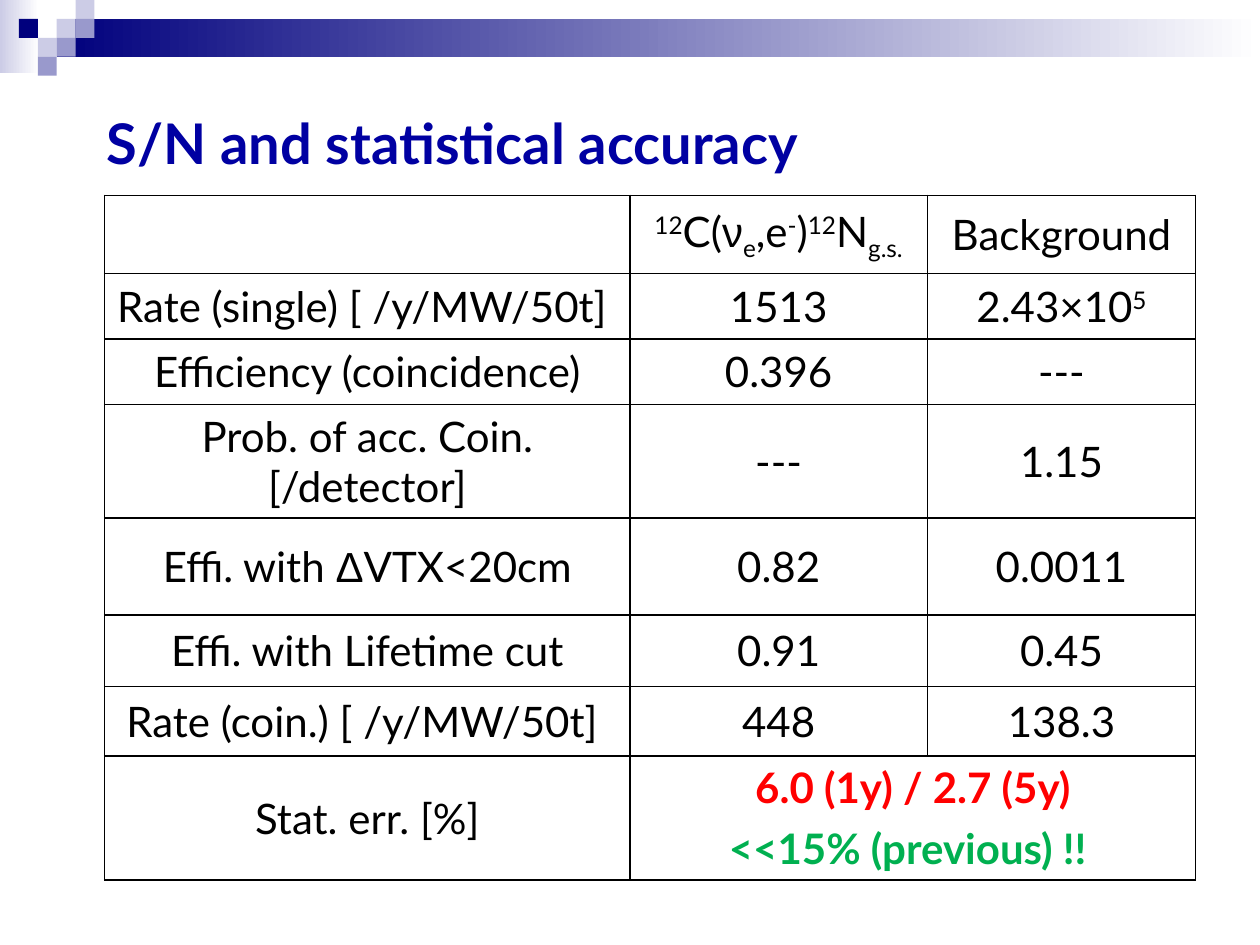
"""Build the slide on signal-to-noise and statistical accuracy."""
from pptx import Presentation, util as u
from pptx.dml.color import RGBColor
from pptx.enum import shapes, text
from pptx.oxml import parse_xml
from pptx.oxml.ns import nsdecls

TITLE = "S/N and statistical accuracy"
NAVY, LILAC, VIOLET, WHITE = "00007D", "CCCCE6", "9999CC", "FFFFFF"
BLACK, RED, GREEN = "000000", "FF0000", "00B050"

STEP = 0.15
BANDS = [(0, 0, 0.31, 0.58, LILAC), (3 * STEP, STEP, 9.55, 2 * STEP, NAVY)]
SQUARES = [(3, 1, LILAC), (4, 0, LILAC), (4, 1, VIOLET), (2, 2, LILAC),
           (1, 1, NAVY), (3, 2, VIOLET), (2, 3, VIOLET)]

REACTION = [("12", 30), ("C(", 0), ("ν", 0), ("e", -25), (",e", 0), ("-", 30),
            (")", 0), ("12", 30), ("N", 0), ("g.s.", -25)]
ROWS = [
    ("", REACTION, "Background"),
    ("Rate (single) [ /y/MW/50t] ", "1513", [("2.43×10", 0), ("5", 30)]),
    ("Efficiency (coincidence)", "0.396", "---"),
    ("Prob. of acc. Coin. [/detector]", "---", "1.15"),
    ([("Effi. with ", 0), ("Δ", 0), ("VTX<20cm", 0)], "0.82", "0.0011"),
    ("Effi. with Lifetime cut", "0.91", "0.45"),
    ("Rate (coin.) [ /y/MW/50t] ", "448", "138.3"),
    ("Stat. err. [%]",),
]
RESULTS = [("6.0 (1y) / 2.7 (5y)", RED, 0), ("<<15% (previous) !! ", GREEN, 6)]
COLUMN_WIDTHS = [4.17, 2.36, 2.13]
ROW_HEIGHTS = [0.62, 0.52, 0.52, 0.9, 0.77, 0.57, 0.55, 0.98]


def rgb(value):
    """Turn a hex string into a colour."""
    return RGBColor.from_string(value)


def inches(*lengths):
    """Convert lengths to slide units."""
    return [u.Inches(length) for length in lengths]


def add_block(slide, box, *colours):
    """Draw a borderless rectangle, plain or fading between two colours."""
    block = slide.shapes.add_shape(shapes.MSO_SHAPE.RECTANGLE, *inches(*box))
    block.shadow.inherit = False
    block.line.fill.background()
    if len(colours) == 1:
        block.fill.solid()
        block.fill.fore_color.rgb = rgb(colours[0])
    else:
        block.fill.gradient()
        block.fill.gradient_angle = 0
        for stop, colour in zip(block.fill.gradient_stops, colours):
            stop.color.rgb = rgb(colour)


def write(paragraph, content, colour=BLACK, size=24, bold=False):
    """Add runs given as a string or as (text, baseline shift) pairs."""
    parts = [(content, 0)] if isinstance(content, str) else content
    for words, shift in parts:
        run = paragraph.add_run()
        run.text = words
        look = {"name": "Arial" if words in "νΔ" else "Lato",
                "size": u.Pt(size), "bold": bold}
        for key, value in look.items():
            setattr(run.font, key, value)
        run.font.color.rgb = rgb(colour)
        if shift:
            run.font._element.set("baseline", str(shift * 1000))


def outline(cell):
    """Give a cell no fill and four thin black borders."""
    cell.fill.background()
    for index, side in enumerate("LRTB"):
        cell._tc.tcPr.insert(index, parse_xml(
            f'<a:ln{side} {nsdecls("a")} w="12700"><a:solidFill>'
            f'<a:srgbClr val="{BLACK}"/></a:solidFill></a:ln{side}>'))


def add_title(slide):
    """Place the heading above the table."""
    frame = slide.shapes.add_textbox(*inches(0.75, 0.87, 9.01, 0.58)).text_frame
    frame.word_wrap = True
    frame.vertical_anchor = text.MSO_ANCHOR.BOTTOM
    frame.paragraphs[0].line_spacing = 0.9
    write(frame.paragraphs[0], TITLE, "0000A2", 32, True)


def add_results(slide):
    """Place the table of rates and efficiencies."""
    table = slide.shapes.add_table(
        len(ROWS), len(COLUMN_WIDTHS),
        *inches(0.83, 1.55, sum(COLUMN_WIDTHS), sum(ROW_HEIGHTS))).table
    table.first_row = table.horz_banding = False
    for column, width in zip(table.columns, COLUMN_WIDTHS):
        column.width = u.Inches(width)
    for row, height in zip(table.rows, ROW_HEIGHTS):
        row.height = u.Inches(height)
    for cell in table.iter_cells():
        outline(cell)
        cell.vertical_anchor = text.MSO_ANCHOR.MIDDLE
        cell.margin_left = cell.margin_right = u.Inches(0.09)
    for r, contents in enumerate(ROWS):
        for c, content in enumerate(contents):
            paragraph = table.cell(r, c).text_frame.paragraphs[0]
            paragraph.alignment = text.PP_ALIGN.CENTER
            if content:
                write(paragraph, content)
    last = len(ROWS) - 1
    summary = table.cell(last, 1)
    summary.merge(table.cell(last, 2))
    frame = summary.text_frame
    for index, (words, colour, gap) in enumerate(RESULTS):
        paragraph = frame.add_paragraph() if index else frame.paragraphs[0]
        paragraph.alignment = text.PP_ALIGN.CENTER
        paragraph.space_before = u.Pt(gap)
        write(paragraph, words, colour, bold=True)


def main():
    """Assemble and save the slide."""
    deck = Presentation()
    deck.slide_width, deck.slide_height = inches(10, 7.5)
    slide = deck.slides.add_slide(deck.slide_layouts[6])
    for *box, colour in BANDS:
        add_block(slide, box, colour, WHITE)
    for column, row, colour in SQUARES:
        add_block(slide, (column * STEP, row * STEP, STEP, STEP), colour)
    add_title(slide)
    add_results(slide)
    deck.save("out.pptx")


if __name__ == "__main__":
    main()
